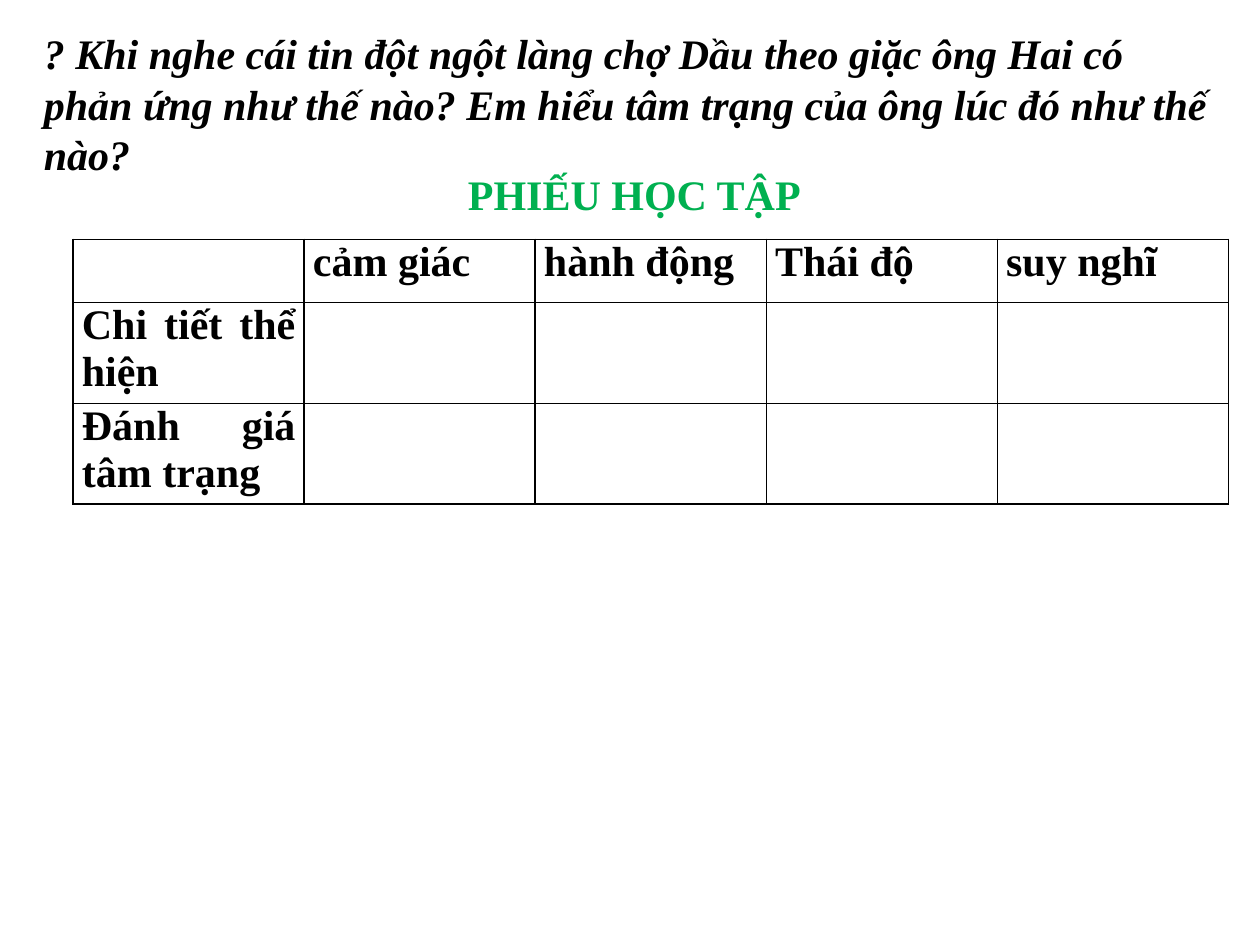
from dataclasses import dataclass

from lxml.etree import SubElement
from pptx import Presentation
from pptx.dml.color import RGBColor
from pptx.enum.text import MSO_AUTO_SIZE, PP_ALIGN
from pptx.oxml.ns import qn
from pptx.util import Inches, Pt


@dataclass(frozen=True)
class Theme:
    font: str = "Times New Roman"
    size: int = 24
    ink: str = "000000"
    green: str = "00B050"
    rule: int = 1
    gap: int = 6


@dataclass(frozen=True)
class Box:
    """Place on the slide, in inches."""
    left: float
    top: float
    width: float
    height: float

    def spans(self) -> list:
        return [Inches(n) for n in (self.left, self.top, self.width, self.height)]


@dataclass(frozen=True)
class Label:
    text: str
    box: Box
    color: str
    align: PP_ALIGN
    italic: bool = False


THEME = Theme()
LABELS = [
    Label("? Khi nghe cái tin đột ngột làng chợ Dầu theo giặc ông Hai có phản ứng "
          "như thế nào? Em hiểu tâm trạng của ông lúc đó như thế nào?",
          Box(0.25, 0.17, 9.5, 2.52), THEME.ink, PP_ALIGN.LEFT, italic=True),
    Label("PHIẾU HỌC TẬP", Box(2.11, 1.29, 5.85, 0.52), THEME.green, PP_ALIGN.CENTER),
]
GRID = Box(0.58, 1.9, 9.17, 2.1)
HEADS = ["", "cảm giác", "hành động", "Thái độ", "suy nghĩ"]
SIDES = ["Chi tiết thể hiện", "Đánh giá tâm trạng"]
ROWS = [0.5, 0.8, 0.8]


def write(frame, text: str, *, color: str = THEME.ink, align=PP_ALIGN.LEFT,
          italic: bool = False, before: int = 0, lines: float | None = None) -> None:
    para = frame.paragraphs[0]
    para.alignment = align
    para.space_before = Pt(before)
    para.line_spacing = lines
    run = para.add_run()
    run.text = text
    font = run.font
    font.name, font.size = THEME.font, Pt(THEME.size)
    font.bold, font.italic = True, italic
    font.color.rgb = RGBColor.from_string(color)


def add_label(slide, label: Label) -> None:
    frame = slide.shapes.add_textbox(*label.box.spans()).text_frame
    frame.word_wrap = True
    frame.auto_size = MSO_AUTO_SIZE.SHAPE_TO_FIT_TEXT
    write(frame, label.text, color=label.color, align=label.align, italic=label.italic)


def rule_cell(cell) -> None:
    """Draw the four borders, which come before the fill in the cell's XML."""
    props = cell._tc.get_or_add_tcPr()
    for side in ("a:lnL", "a:lnR", "a:lnT", "a:lnB"):
        line = SubElement(props, qn(side), w=str(Pt(THEME.rule)))
        fill = SubElement(line, qn("a:solidFill"))
        SubElement(fill, qn("a:srgbClr"), val=THEME.ink)
    cell.fill.background()


def add_grid(slide) -> None:
    table = slide.shapes.add_table(len(ROWS), len(HEADS), *GRID.spans()).table
    table.first_row = table.horz_banding = False
    for col in table.columns:
        col.width = Inches(GRID.width / len(HEADS))
    texts = [HEADS] + [[side] + [""] * (len(HEADS) - 1) for side in SIDES]
    for row, high, line in zip(table.rows, ROWS, texts):
        row.height = Inches(high)
        for cell, text in zip(row.cells, line):
            rule_cell(cell)
            if text:
                cell.margin_left = cell.margin_right = Inches(0.07)
                cell.margin_top = cell.margin_bottom = 0
                write(cell.text_frame, text, align=PP_ALIGN.JUSTIFY, before=THEME.gap)


def main() -> None:
    deck = Presentation()
    deck.slide_width, deck.slide_height = Inches(10), Inches(7.5)
    slide = deck.slides.add_slide(deck.slide_layouts[6])
    # Question and heading
    for label in LABELS:
        add_label(slide, label)
    # Worksheet
    add_grid(slide)
    deck.save("out.pptx")


if __name__ == "__main__":
    main()
